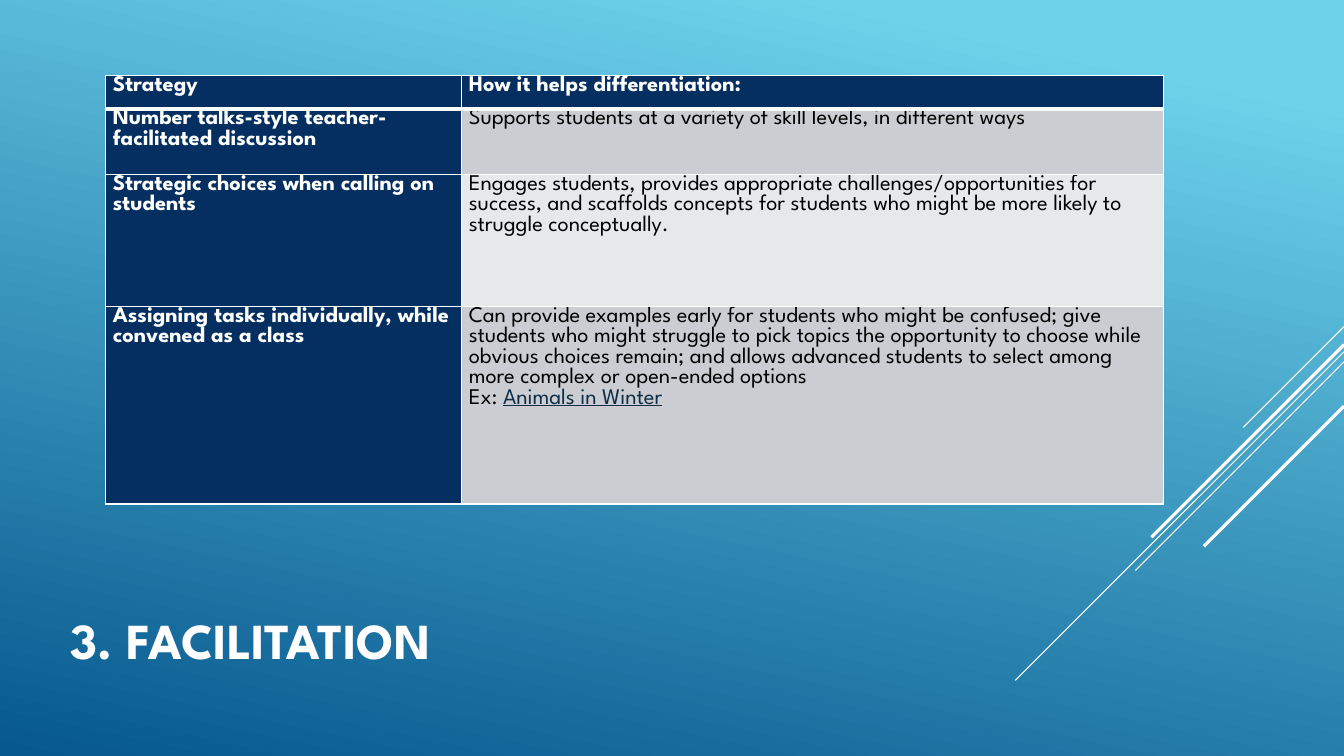
"""Build the facilitation slide: a strategy table, a title and diagonal accent lines."""
from lxml import etree
from pptx import Presentation
from pptx import util as u
from pptx.dml.color import RGBColor
from pptx.enum import shapes, text
from pptx.oxml.ns import qn

FONT = "League Spartan"
COLORS = {"sky": "6ED2EB", "deep": "06588E", "navy": "052F61", "white": "FFFFFF",
          "black": "000000", "link": "0D2E46", "odd": "CCCDD2", "even": "E7E8EA"}
WIDTH, HEIGHT = 13.33, 7.5
TITLE = "3. FACILITATION"
TITLE_BOX = (0.6, 5.35, 9.33, 1.98)
TABLE_AT = (1.05, 0.75)
COLUMNS = (3.53, 6.96)
ROWS = (0.33, 0.65, 1.31, 1.96)
TABLE = [
    ("Strategy", ["How it helps differentiation:"]),
    ("Number talks-style teacher-facilitated discussion",
     ["Supports students at a variety of skill levels, in different ways"]),
    ("Strategic choices when calling on students",
     ["Engages students, provides appropriate challenges/opportunities for success, "
      "and scaffolds concepts for students who might be more likely to struggle conceptually."]),
    ("Assigning tasks individually, while convened as a class",
     ["Can provide examples early for students who might be confused; give students who "
      "might struggle to pick topics the opportunity to choose while obvious choices remain; "
      "and allows advanced students to select among more complex or open-ended options",
      "Ex: "]),
]
LINK_TEXT = "Animals in Winter"
# (top at the right edge, horizontal and vertical run, weight)
DIAGONALS = [(3.24, 1.0, 0.75), (3.49, 3.26, 0.75), (3.59, 2.07, 0.75),
             (3.42, 1.91, 2.25), (4.03, 1.39, 2.25)]


def rgb(name):
    return RGBColor.from_string(COLORS[name])


def add_run(p, words, size, color, bold=False, underline=None):
    r = p.add_run()
    r.text = words
    f = r.font
    f.name, f.size, f.bold, f.underline = FONT, u.Pt(size), bold, underline
    f.color.rgb = rgb(color)


def set_borders(cell, top, bottom):
    tc_pr = cell._tc.get_or_add_tcPr()
    sides = (("a:lnL", 1), ("a:lnR", 1), ("a:lnT", top), ("a:lnB", bottom))
    for i, (tag, weight) in enumerate(sides):
        ln = etree.Element(qn(tag), w=str(u.Pt(weight)))
        fill = etree.SubElement(ln, qn("a:solidFill"))
        etree.SubElement(fill, qn("a:srgbClr"), val=COLORS["white"])
        tc_pr.insert(i, ln)


def fill_cell(cell, lines, row, col):
    strong = row == 0 or col == 0
    cell.margin_left = cell.margin_right = u.Inches(0.07)
    cell.margin_top = cell.margin_bottom = 0
    cell.fill.solid()
    cell.fill.fore_color.rgb = rgb("navy" if strong else "odd" if row % 2 else "even")
    set_borders(cell, 3 if row == 1 else 1, 3 if row == 0 else 1)
    tf = cell.text_frame
    for i, line in enumerate(lines):
        p = tf.add_paragraph() if i else tf.paragraphs[0]
        add_run(p, line, 16, "white" if strong else "black", strong)
        if line == "Ex: ":
            add_run(p, LINK_TEXT, 16, "link", underline=True)


def add_background(s):
    fill = s.background.fill
    fill.gradient()
    fill.gradient_angle = 258
    for stop, position, color in zip(fill.gradient_stops, (0.1, 1), ("sky", "deep")):
        stop.position = position
        stop.color.rgb = rgb(color)


def add_diagonals(s):
    for top, run, weight in DIAGONALS:
        ends = (WIDTH, top, WIDTH - run, top + run)
        line = s.shapes.add_connector(shapes.MSO_CONNECTOR.STRAIGHT, *map(u.Inches, ends))
        line.line.color.rgb = rgb("white")
        line.line.width = u.Pt(weight)
        etree.SubElement(line._element.spPr, qn("a:effectLst"))


def add_title(s):
    sp = s.shapes.title
    sp.left, sp.top, sp.width, sp.height = map(u.Inches, TITLE_BOX)
    tf = sp.text_frame
    tf.word_wrap = True
    tf.vertical_anchor = text.MSO_ANCHOR.MIDDLE
    p = tf.paragraphs[0]
    p.alignment = text.PP_ALIGN.LEFT
    add_run(p, TITLE, 36, "white", True)


def add_strategies(s):
    box = (*TABLE_AT, sum(COLUMNS), sum(ROWS))
    table = s.shapes.add_table(len(ROWS), len(COLUMNS), *map(u.Inches, box)).table
    for column, width in zip(table.columns, COLUMNS):
        column.width = u.Inches(width)
    for i, (height, (strategy, benefits)) in enumerate(zip(ROWS, TABLE)):
        table.rows[i].height = u.Inches(height)
        for j, lines in enumerate(([strategy], benefits)):
            fill_cell(table.cell(i, j), lines, i, j)


def main():
    prs = Presentation()
    prs.slide_width, prs.slide_height = u.Inches(WIDTH), u.Inches(HEIGHT)
    s = prs.slides.add_slide(prs.slide_layouts[5])
    add_background(s)
    add_diagonals(s)
    add_title(s)
    add_strategies(s)
    prs.save("out.pptx")


if __name__ == "__main__":
    main()
